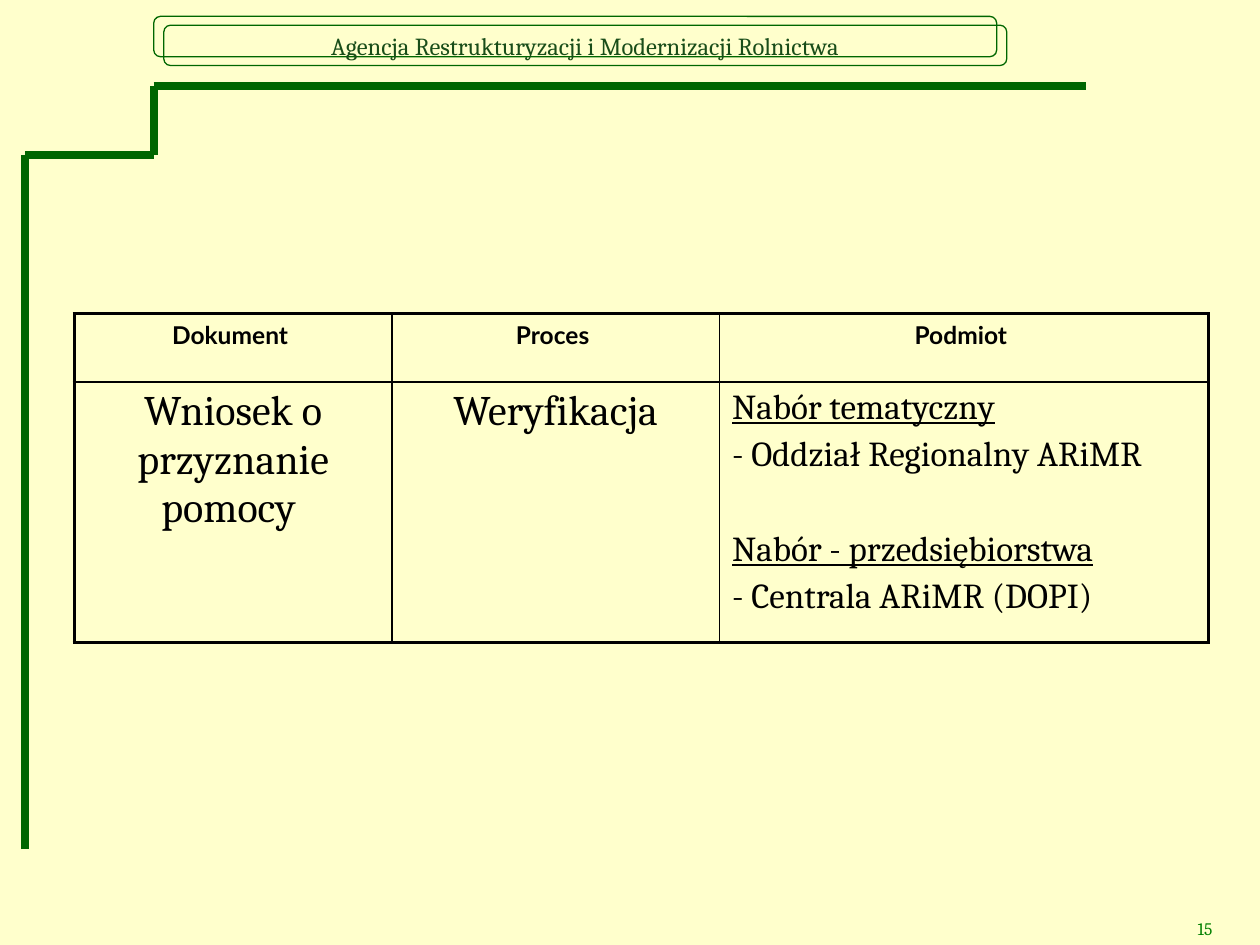
import itertools

import pptx
import pptx.dml.color
import pptx.enum.shapes
import pptx.enum.text
import pptx.oxml
import pptx.oxml.ns
import pptx.util

Inches = pptx.util.Inches
Pt = pptx.util.Pt
RGBColor = pptx.dml.color.RGBColor
ALIGN = pptx.enum.text.PP_ALIGN

CREAM = RGBColor(0xFF, 0xFF, 0xCC)
GREEN = RGBColor(0x00, 0x66, 0x00)
HEADER_GREEN = RGBColor(0x19, 0x4D, 0x19)
NUMBER_GREEN = RGBColor(0x00, 0x80, 0x00)
BLACK = RGBColor(0x00, 0x00, 0x00)

FRAME_POINTS = [(0.2, 6.74), (0.2, 1.23), (1.22, 1.23), (1.22, 0.68), (8.62, 0.68)]
COLUMN_WIDTHS = [2.52, 2.6, 3.88]
ROW_HEIGHTS = [0.54, 2.07]
HEADINGS = ["Dokument ", "Proces ", "Podmiot "]
STEPS = ["Wniosek o przyznanie pomocy ", "Weryfikacja"]
ENTITIES = [
    ("Nabór tematyczny", "- Oddział Regionalny ARiMR"),
    ("Nabór - przedsiębiorstwa", "- Centrala ARiMR (DOPI)"),
]
OUTER, INNER = 2.25, 1


def write(para, text, size, font="Cambria", color=BLACK, bold=False,
          underline=False, align=ALIGN.LEFT, before=0):
    para.alignment = align
    para.space_before = Pt(before)
    span = para.add_run()
    span.text = text
    span.font.name = font
    span.font.size = Pt(size)
    span.font.color.rgb = color
    span.font.bold = bold
    span.font.underline = underline


def add_line(page, start, end):
    line = page.shapes.add_connector(
        pptx.enum.shapes.MSO_CONNECTOR.STRAIGHT,
        *(Inches(value) for value in start + end))
    line.line.color.rgb = GREEN
    line.line.width = Pt(4.5)
    properties = line.element.find(pptx.oxml.ns.qn("p:spPr"))
    pptx.oxml.ns.qn("a:effectLst")
    properties.append(pptx.oxml.parse_xml(
        f"<a:effectLst {pptx.oxml.ns.nsdecls('a')}/>"))


def add_banner(page, left, top):
    banner = page.shapes.add_shape(
        pptx.enum.shapes.MSO_SHAPE.ROUNDED_RECTANGLE,
        Inches(left), Inches(top), Inches(6.69), Inches(0.32))
    banner.shadow.inherit = False
    banner.fill.background()
    banner.line.color.rgb = GREEN
    banner.line.width = Pt(0.75)
    return banner


def set_borders(cell, widths):
    properties = cell._tc.get_or_add_tcPr()
    for side, width in widths.items():
        properties.append(pptx.oxml.parse_xml(
            f"<a:ln{side} {pptx.oxml.ns.nsdecls('a')} w='{Pt(width)}'>"
            f"<a:solidFill><a:srgbClr val='{BLACK}'/></a:solidFill></a:ln{side}>"))


def add_process_table(page):
    table = page.shapes.add_table(
        len(ROW_HEIGHTS), len(COLUMN_WIDTHS),
        Inches(0.59), Inches(2.49), Inches(9), Inches(2.61)).table
    table.first_row = False
    table.horz_banding = False
    for column, width in zip(table.columns, COLUMN_WIDTHS):
        column.width = Inches(width)
    for row, height in zip(table.rows, ROW_HEIGHTS):
        row.height = Inches(height)

    last_row, last_column = len(ROW_HEIGHTS) - 1, len(COLUMN_WIDTHS) - 1
    for r, c in itertools.product(range(last_row + 1), range(last_column + 1)):
        cell = table.cell(r, c)
        set_borders(cell, {
            "L": OUTER if c == 0 else INNER,
            "R": OUTER if c == last_column else INNER,
            "T": OUTER if r == 0 else INNER,
            "B": OUTER if r == last_row else INNER,
        })
        cell.fill.background()

    for c, heading in enumerate(HEADINGS):
        write(table.cell(0, c).text_frame.paragraphs[0], heading, 14,
              font="Lato", bold=True, align=ALIGN.CENTER)
    for c, step in enumerate(STEPS):
        write(table.cell(1, c).text_frame.paragraphs[0], step, 24,
              align=ALIGN.CENTER)

    frame = table.cell(1, last_column).text_frame
    for index, (call, office) in enumerate(ENTITIES):
        para = frame.add_paragraph() if index else frame.paragraphs[0]
        write(para, call, 20, underline=True, before=31 if index else 0)
        write(frame.add_paragraph(), office, 20, before=4)


def add_page_number(page, number):
    box = page.shapes.add_textbox(
        Inches(6.81), Inches(7.24), Inches(2.91), Inches(0.29))
    box.text_frame.word_wrap = True
    write(box.text_frame.paragraphs[0], number, 10, color=NUMBER_GREEN,
          align=ALIGN.RIGHT)


def main():
    deck = pptx.Presentation()
    deck.slide_width = Inches(10)
    deck.slide_height = Inches(7.5)
    page = deck.slides.add_slide(deck.slide_layouts[6])
    page.background.fill.solid()
    page.background.fill.fore_color.rgb = CREAM

    for start, end in zip(FRAME_POINTS, FRAME_POINTS[1:]):
        add_line(page, start, end)
    add_banner(page, 1.22, 0.13)
    banner = add_banner(page, 1.3, 0.2)
    banner.text_frame.word_wrap = False
    banner.text_frame.vertical_anchor = pptx.enum.text.MSO_ANCHOR.MIDDLE
    write(banner.text_frame.paragraphs[0],
          "Agencja Restrukturyzacji i Modernizacji Rolnictwa", 14,
          color=HEADER_GREEN, align=ALIGN.CENTER)
    add_process_table(page)
    add_page_number(page, "15")
    deck.save("out.pptx")


if __name__ == "__main__":
    main()
